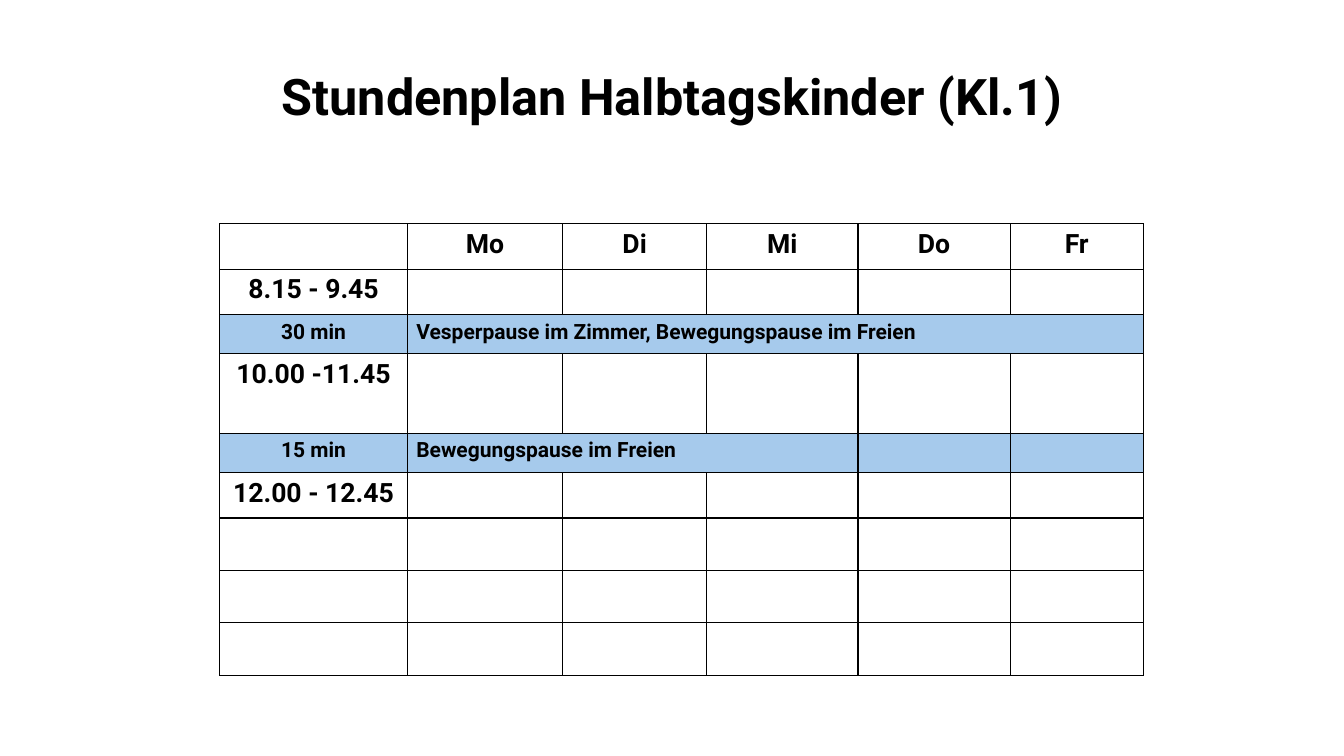
from lxml.etree import SubElement
from pptx import Presentation
from pptx.dml.color import RGBColor
from pptx.enum.text import MSO_ANCHOR, PP_ALIGN
from pptx.oxml.ns import qn
from pptx.util import Inches, Pt

COLORS = {"ink": "000000", "paper": "FFFFFF", "pause": "A6CAEC"}
WIDTHS = [1.86, 1.54, 1.43, 1.5, 1.51, 1.32]
HEIGHTS = [0.45, 0.45, 0.39, 0.79, 0.39, 0.45, 0.52, 0.52, 0.52]
ROWS = [
    ["", "Mo", "Di", "Mi", "Do", "Fr"],
    ["8.15 - 9.45"],
    ["30 min", "Vesperpause im Zimmer, Bewegungspause im Freien"],
    ["10.00 -11.45"],
    ["15 min", "Bewegungspause im Freien"],
    ["12.00 - 12.45"],
]
PAUSES = {2: 5, 4: 3}  # row: number of days the pause text spans


class Deck:
    def __init__(self):
        self.prs = Presentation()
        self.prs.slide_width = Inches(13.33)
        self.prs.slide_height = Inches(7.5)
        self.slide = self.prs.slides.add_slide(self.prs.slide_layouts[6])
        self.font = "Roboto"

    def label(self, para, text, size, align):
        """Set the text of a paragraph and format its runs."""
        para.text = text
        para.alignment = align
        for run in para.runs:
            run.font.name = self.font
            run.font.size = Pt(size)
            run.font.bold = True
            run.font.color.rgb = RGBColor.from_string(COLORS["ink"])

    def title(self, text, left, top, width, height):
        box = self.slide.shapes.add_textbox(
            Inches(left), Inches(top), Inches(width), Inches(height))
        frame = box.text_frame
        frame.word_wrap = True
        frame.vertical_anchor = MSO_ANCHOR.BOTTOM
        para = frame.paragraphs[0]
        self.label(para, text, 36, PP_ALIGN.CENTER)
        para.line_spacing = 0.9

    def edge(self, cell):
        """Draw a thin line on all four sides, ahead of the cell fill."""
        props = cell._tc.get_or_add_tcPr()
        for side in ("a:lnL", "a:lnR", "a:lnT", "a:lnB"):
            line = SubElement(props, qn(side), w=str(Pt(1)))
            fill = SubElement(line, qn("a:solidFill"))
            SubElement(fill, qn("a:srgbClr"), val=COLORS["ink"])

    def cell(self, cell, text, size, align, fill):
        self.edge(cell)
        cell.fill.solid()
        cell.fill.fore_color.rgb = RGBColor.from_string(COLORS[fill])
        cell.margin_left = cell.margin_right = Inches(0.09)
        cell.margin_top = cell.margin_bottom = Inches(0.05 if text else 0)
        if text:
            self.label(cell.text_frame.paragraphs[0], text, size, align)

    def table(self, left, top):
        table = self.slide.shapes.add_table(
            len(HEIGHTS), len(WIDTHS), Inches(left), Inches(top),
            Inches(sum(WIDTHS)), Inches(sum(HEIGHTS))).table
        table.first_row = table.horz_banding = False
        for col, width in zip(table.columns, WIDTHS):
            col.width = Inches(width)
        for r, height in enumerate(HEIGHTS):
            table.rows[r].height = Inches(height)
            texts = ROWS[r] if r < len(ROWS) else []
            pause = r in PAUSES
            for c in range(len(WIDTHS)):
                self.cell(
                    table.cell(r, c),
                    texts[c] if c < len(texts) else "",
                    15 if pause else 19,
                    PP_ALIGN.LEFT if pause and c else PP_ALIGN.CENTER,
                    "pause" if pause else "paper")
        for r, span in PAUSES.items():
            table.cell(r, 1).merge(table.cell(r, span))


def main():
    deck = Deck()
    deck.title("Stundenplan Halbtagskinder (Kl.1)", 1.89, 0.55, 9.55, 0.75)
    deck.table(2.18, 2.22)
    deck.prs.save("out.pptx")


if __name__ == "__main__":
    main()
